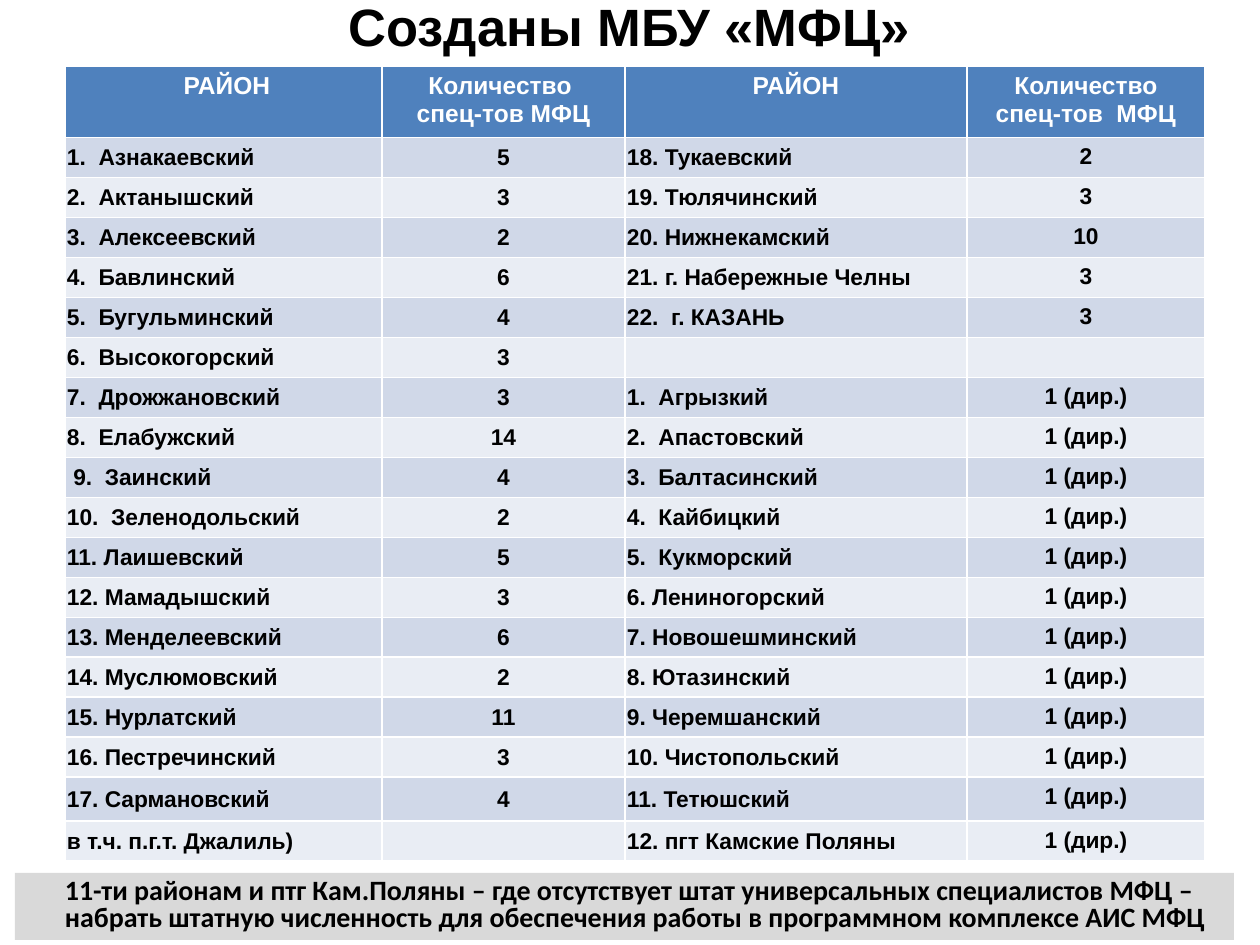
from pptx import Presentation
from pptx.dml.color import RGBColor
from pptx.enum.shapes import MSO_SHAPE
from pptx.enum.text import MSO_ANCHOR as ANCHOR, PP_ALIGN as ALIGN

PX = 914400 // 126
COLORS = {"black": "000000", "white": "FFFFFF", "header": "4F81BD",
          "odd": "D0D8E8", "even": "E9EDF4", "footer": "D9D9D9"}

TITLE = "Созданы МБУ «МФЦ»"
HEADER = [" РАЙОН", "Количество \nспец-тов МФЦ", "РАЙОН", "Количество спец-тов  МФЦ"]
DIRECTOR = "1 (дир.)"
ROWS = [
    ("1.  Азнакаевский", "5", "18. Тукаевский", "2"),
    ("2.  Актанышский", "3", "19. Тюлячинский", "3"),
    ("3.  Алексеевский", "2", "20. Нижнекамский", "10"),
    ("4.  Бавлинский", "6", "21. г. Набережные Челны", "3"),
    ("5.  Бугульминский", "4", "22.  г. КАЗАНЬ", "3"),
    ("6.  Высокогорский", "3", "", ""),
    ("7.  Дрожжановский", "3", "1.  Агрызкий", DIRECTOR),
    ("8.  Елабужский", "14", "2.  Апастовский", DIRECTOR),
    (" 9.  Заинский", "4", "3.  Балтасинский", DIRECTOR),
    ("10.  Зеленодольский", "2", "4.  Кайбицкий", DIRECTOR),
    ("11. Лаишевский", "5", "5.  Кукморский", DIRECTOR),
    ("12. Мамадышский", "3", "6. Лениногорский", DIRECTOR),
    ("13. Менделеевский", "6", "7. Новошешминский", DIRECTOR),
    ("14. Муслюмовский", "2", "8. Ютазинский", DIRECTOR),
    ("15. Нурлатский", "11", "9. Черемшанский", DIRECTOR),
    ("16. Пестречинский", "3", "10. Чистопольский", DIRECTOR),
    ("17. Сармановский", "4", "11. Тетюшский", DIRECTOR),
    ("в т.ч. п.г.т. Джалиль)", "", "12. пгт Камские Поляны", DIRECTOR),
]
FOOTER = ("11-ти районам и птг Кам.Поляны – где отсутствует штат универсальных специалистов МФЦ –\n"
          "набрать штатную численность для обеспечения работы в программном комплексе АИС МФЦ")

TITLE_BOX = (94, -24, 1071, 100)
TABLE_LEFT, TABLE_TOP = 65, 66
COL_WIDTHS = [317, 243, 342, 238]
HEADER_H, LAST_ROWS = 70, [44, 40]
BODY_H, BODY_ROWS = 629, len(ROWS) - len(LAST_ROWS)
FOOTER_BOX = (15, 873, 1219, 67)
TEXT_INSET, FOOTER_INSET = 2, 50


def px(*values):
    return [v * PX for v in values]


def color(name):
    return RGBColor.from_string(COLORS[name])


def paint(item, name):
    item.fill.solid()
    item.fill.fore_color.rgb = color(name)


def write(tf, text, size, font="Arial", ink="black", align=ALIGN.LEFT, spacing=None):
    for i, line in enumerate(text.split("\n")):
        p = tf.add_paragraph() if i else tf.paragraphs[0]
        p.alignment = align
        if spacing:
            p.line_spacing = spacing
        r = p.add_run()
        r.text = line
        r.font.size, r.font.name, r.font.bold = size * 12700, font, True
        r.font.color.rgb = color(ink)


def add_title(slide):
    tf = slide.shapes.add_textbox(*px(*TITLE_BOX)).text_frame
    tf.word_wrap = True
    tf.vertical_anchor = ANCHOR.MIDDLE
    write(tf, TITLE, 30, align=ALIGN.CENTER)


def row_heights():
    edges = [round(BODY_H * i / BODY_ROWS) for i in range(BODY_ROWS + 1)]
    return [HEADER_H] + [b - a for a, b in zip(edges, edges[1:])] + LAST_ROWS


def fill_body_cell(cell, text, row, col):
    paint(cell, "odd" if row % 2 else "even")
    is_name = col % 2 == 0
    if is_name or not text:
        cell.margin_left = TEXT_INSET * PX
        cell.margin_top = cell.margin_right = cell.margin_bottom = 0
    if col < 3:
        cell.vertical_anchor = ANCHOR.MIDDLE
    if text:
        write(cell.text_frame, text, 13, align=ALIGN.LEFT if is_name else ALIGN.CENTER)


def add_districts(slide):
    heights = row_heights()
    frame = slide.shapes.add_table(
        len(heights), len(COL_WIDTHS),
        *px(TABLE_LEFT, TABLE_TOP, sum(COL_WIDTHS), sum(heights)))
    table = frame.table
    for column, width in zip(table.columns, COL_WIDTHS):
        column.width = width * PX
    for row, height in zip(table.rows, heights):
        row.height = height * PX
    for col, text in enumerate(HEADER):
        cell = table.cell(0, col)
        paint(cell, "header")
        write(cell.text_frame, text, 14, ink="white", align=ALIGN.CENTER)
    for row, texts in enumerate(ROWS, 1):
        for col, text in enumerate(texts):
            fill_body_cell(table.cell(row, col), text, row, col)


def add_footer(slide):
    sp = slide.shapes.add_shape(MSO_SHAPE.RECTANGLE, *px(*FOOTER_BOX))
    sp.shadow.inherit = False
    paint(sp, "footer")
    sp.line.fill.background()
    tf = sp.text_frame
    tf.word_wrap = True
    tf.vertical_anchor = ANCHOR.TOP
    tf.margin_left = FOOTER_INSET * PX
    write(tf, FOOTER, 16, font="Calibri", spacing=0.8)


def main():
    prs = Presentation()
    prs.slide_width, prs.slide_height = px(1260, 945)
    slide = prs.slides.add_slide(prs.slide_layouts[6])
    add_title(slide)
    add_districts(slide)
    add_footer(slide)
    prs.save("out.pptx")


if __name__ == "__main__":
    main()
